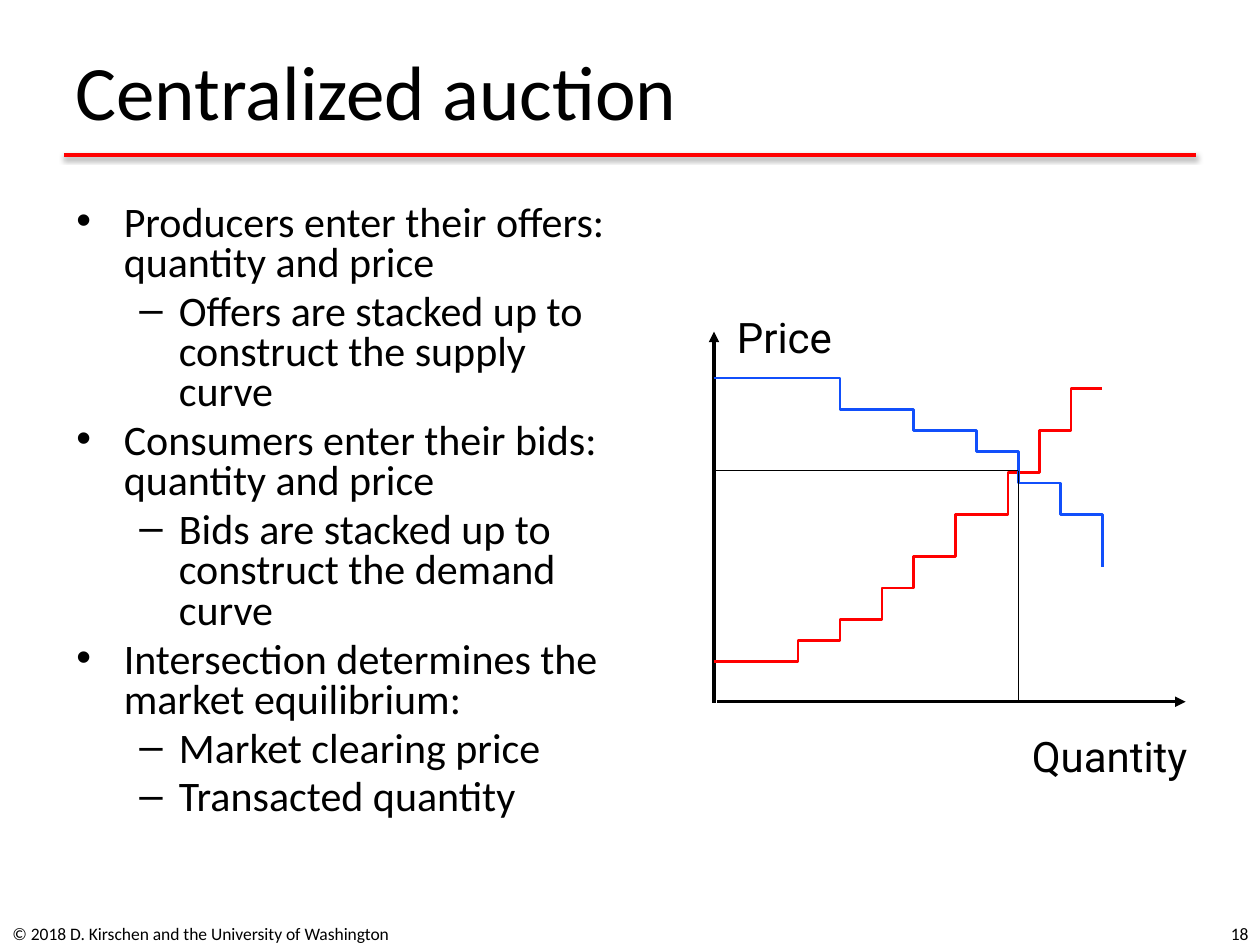
from lxml.etree import SubElement as Sub
from pptx import Presentation
from pptx.dml.color import RGBColor
from pptx.enum.shapes import MSO_CONNECTOR as Conn
from pptx.enum.text import MSO_ANCHOR as Anchor, MSO_AUTO_SIZE as Auto, PP_ALIGN as Align
from pptx.oxml.ns import qn
from pptx.util import Pt

BLACK, RED, BLUE = "000000", "FF0000", "114FFB"
LEFT, BASE = 408, 401.5
BODY = [
    (0, "Producers enter their offers: quantity and price"),
    (1, "Offers are stacked up to construct the supply curve"),
    (0, "Consumers enter their bids: quantity and price"),
    (1, "Bids are stacked up to construct the demand curve"),
    (0, "Intersection determines the market equilibrium:"),
    (1, "Market clearing price"),
    (1, "Transacted quantity"),
]
SUPPLY = [(48, -12), (24, -12), (24, -18), (18, -18), (24, -24),
          (30, -24), (18, -24), (18, -24), (18, 0)]
DEMAND = [(72, 18), (42, 12), (36, 12), (24, 18), (24, 18), (24, 30)]


def paint(target, color):
    """Give a font or line a solid colour from a hex string."""
    target.color.rgb = RGBColor.from_string(color)


def place(shape, left, top, width, height):
    """Move and size a shape, in points."""
    shape.left, shape.top = Pt(left), Pt(top)
    shape.width, shape.height = Pt(width), Pt(height)


def write(para, text, size=24, font="Calibri", color=BLACK, align=Align.LEFT,
          level=0, space=None):
    """Put formatted text in a paragraph."""
    para.alignment, para.level, para.line_spacing = align, level, space
    run = para.add_run()
    run.text = text
    run.font.size, run.font.name = Pt(size), font
    paint(run.font, color)


def label(slide, text, box, wrap=True, anchor=Anchor.TOP, **style):
    """Add a text box with one line of text."""
    frame = slide.shapes.add_textbox(*map(Pt, box)).text_frame
    frame.word_wrap, frame.vertical_anchor = wrap, anchor
    write(frame.paragraphs[0], text, **style)


def title(slide, text):
    """Fill the title placeholder."""
    shape = slide.shapes.title
    place(shape, 36, 9.5, 648, 84)
    shape.text_frame.vertical_anchor = Anchor.MIDDLE
    write(shape.text_frame.paragraphs[0], text, size=44)


def bullets(slide, items):
    """Fill the body placeholder with a list of levels and texts."""
    shape = slide.placeholders[1]
    place(shape, 36.5, 113.5, 317.5, 369)
    frame = shape.text_frame
    frame.auto_size = Auto.NONE
    for i, (level, text) in enumerate(items):
        para = frame.add_paragraph() if i else frame.paragraphs[0]
        write(para, text, level=level, space=0.8)


def line(slide, start, end, color=BLACK, width=2, arrow=False, shadow=False):
    """Draw a straight line, with an arrowhead or a shadow if asked."""
    link = slide.shapes.add_connector(Conn.STRAIGHT, *map(Pt, start + end))
    link.line.width = Pt(width)
    paint(link.line, color)
    if arrow:
        Sub(link.line._get_or_add_ln(), qn("a:tailEnd"), type="triangle")
    effects = Sub(link._element.spPr, qn("a:effectLst"))
    if shadow:
        cast = Sub(effects, qn("a:outerShdw"), blurRad=str(Pt(3.1)),
                   dist=str(Pt(1.6)), dir="5400000", rotWithShape="0")
        tone = Sub(cast, qn("a:srgbClr"), val=BLACK)
        Sub(tone, qn("a:alpha"), val="38000")


def stairs(slide, top, steps, color):
    """Draw a stepped curve from pairs of run and rise."""
    x, y, points = LEFT, top, []
    for run, rise in steps:
        x += run
        points.append((x, y))
        if rise:
            y += rise
            points.append((x, y))
    path = slide.shapes.build_freeform(LEFT, top, scale=Pt(1))
    path.add_line_segments(points, close=False)
    shape = path.convert_to_shape()
    shape.shadow.inherit = False
    shape.fill.background()
    shape.line.width = Pt(1.5)
    paint(shape.line, color)


def graph(slide):
    """Draw the axes, both curves and the equilibrium lines."""
    line(slide, (410, 401), (677.5, 401), arrow=True)
    line(slide, (LEFT, BASE), (LEFT, 189.5), arrow=True)
    label(slide, "Price", (414, 174.5, 69, 36), wrap=False, font="Roboto")
    label(slide, "Quantity", (582.5, 414, 103.5, 36), wrap=False, font="Roboto")
    stairs(slide, 378, SUPPLY, RED)
    stairs(slide, 216, DEMAND, BLUE)
    line(slide, (582, 269), (582, BASE), width=0.75)
    line(slide, (582, 269), (LEFT, 269), width=0.75)


def main():
    """Build and save the slide."""
    deck = Presentation()
    deck.slide_width, deck.slide_height = Pt(720), Pt(540)
    slide = deck.slides.add_slide(deck.slide_layouts[1])
    line(slide, (36.5, 88.5), (683.5, 88.5), color=RED, shadow=True)
    title(slide, "Centralized auction")
    bullets(slide, BODY)
    label(slide, "© 2018 D. Kirschen and the University of Washington",
          (0, 519, 309, 29), anchor=Anchor.MIDDLE, size=10)
    label(slide, "18", (553, 519, 167.5, 29), anchor=Anchor.MIDDLE, size=10,
          align=Align.RIGHT)
    graph(slide)
    deck.save("out.pptx")


if __name__ == "__main__":
    main()
